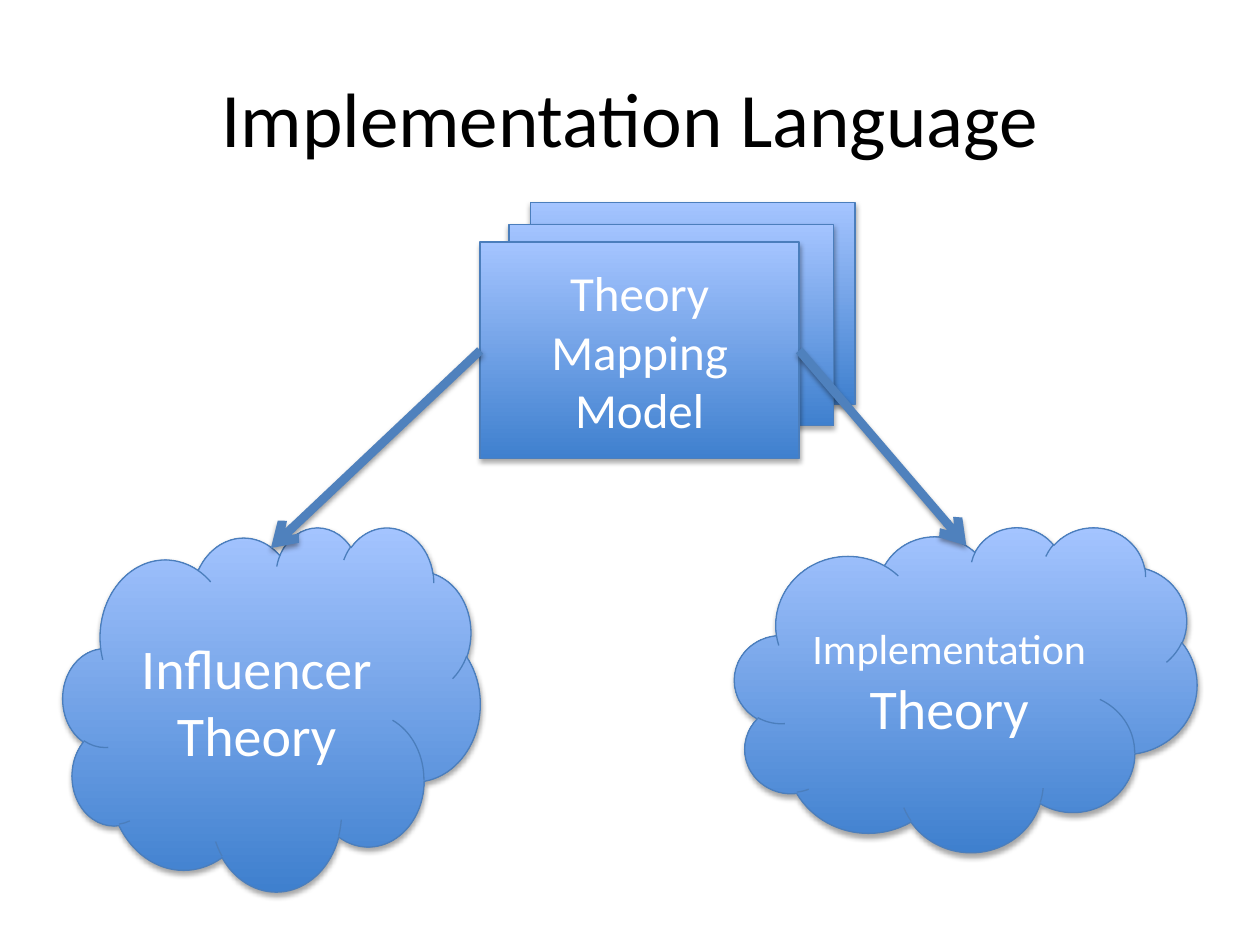
import pptx
import pptx.util
import pptx.dml.color
import pptx.enum.shapes
import pptx.enum.text
import pptx.oxml
import pptx.oxml.ns

Cm, Pt = pptx.util.Cm, pptx.util.Pt
RGBColor = pptx.dml.color.RGBColor
MSO_SHAPE = pptx.enum.shapes.MSO_SHAPE

FONT = "Calibri"
BLACK = RGBColor(0x00, 0x00, 0x00)
WHITE = RGBColor(0xFF, 0xFF, 0xFF)
DARK_BLUE = RGBColor(0x3F, 0x80, 0xCE)
LIGHT_BLUE = RGBColor(0xA4, 0xC4, 0xFF)
OUTLINE = RGBColor(0x4B, 0x7E, 0xBC)
ARROW = RGBColor(0x4F, 0x81, 0xBD)


def add_shadow(spPr, dist, opacity):
    """Append a soft shadow that falls straight down."""
    spPr.append(pptx.oxml.parse_xml(
        f'<a:effectLst {pptx.oxml.ns.nsdecls("a")}>'
        f'<a:outerShdw blurRad="{Pt(3.1)}" dist="{Pt(dist)}" dir="5400000" rotWithShape="0">'
        f'<a:srgbClr val="000000"><a:alpha val="{opacity * 1000}"/></a:srgbClr>'
        '</a:outerShdw></a:effectLst>'))


def write_lines(tf, lines, color):
    """Fill a text frame with centred (text, size) paragraphs."""
    tf.word_wrap = True
    tf.vertical_anchor = pptx.enum.text.MSO_ANCHOR.MIDDLE
    for i, (text, size) in enumerate(lines):
        p = tf.paragraphs[0] if i == 0 else tf.add_paragraph()
        p.text = text
        p.alignment = pptx.enum.text.PP_ALIGN.CENTER
        p.font.name = FONT
        p.font.size = Pt(size)
        p.font.color.rgb = color


prs = pptx.Presentation()
prs.slide_width, prs.slide_height = Cm(25.4), Cm(19.05)
s = prs.slides.add_slide(prs.slide_layouts[6])

# Title
tb = s.shapes.add_textbox(Cm(1.27), Cm(0.76), Cm(22.86), Cm(3.18))
write_lines(tb.text_frame, [("Implementation Language", 44)], BLACK)

# Theory clouds and the stack of model cards, back to front
shapes = [
    (MSO_SHAPE.RECTANGLE, 10.69, 4.09, 6.55, 4.06, []),
    (MSO_SHAPE.RECTANGLE, 10.26, 4.52, 6.55, 4.06, []),
    (MSO_SHAPE.CLOUD, 1.27, 10.62, 8.41, 7.34, [("Influencer", 32), ("Theory", 32)]),
    (MSO_SHAPE.CLOUD, 14.81, 10.62, 9.32, 6.55, [("Implementation", 24), ("Theory", 32)]),
    (MSO_SHAPE.RECTANGLE, 9.68, 4.88, 6.43, 4.37,
     [("Theory", 28), ("Mapping", 28), ("Model", 28)]),
]
for kind, x, y, w, h, lines in shapes:
    sp = s.shapes.add_shape(kind, Cm(x), Cm(y), Cm(w), Cm(h))
    sp.fill.gradient()
    sp.fill.gradient_angle = 90
    for stop, color in zip(sp.fill.gradient_stops, (DARK_BLUE, LIGHT_BLUE)):
        stop.color.rgb = color
    sp.line.color.rgb = OUTLINE
    sp.line.width = Pt(0.75)
    add_shadow(sp._element.spPr, 1.8, 35)
    write_lines(sp.text_frame, lines, WHITE)
front_card = sp

# Arrows from the sides of the front card to the clouds
for side, x, y in [(1, 5.46, 11.05), (3, 19.48, 11)]:
    cxn = s.shapes.add_connector(
        pptx.enum.shapes.MSO_CONNECTOR.STRAIGHT, Cm(12.9), Cm(7.06), Cm(x), Cm(y))
    cxn.begin_connect(front_card, side)
    cxn.line.color.rgb = ARROW
    cxn.line.width = Pt(5)
    cxn.line._get_or_add_ln().append(pptx.oxml.parse_xml(
        f'<a:tailEnd {pptx.oxml.ns.nsdecls("a")} type="arrow"/>'))
    add_shadow(cxn._element.spPr, 1.6, 38)

prs.save("out.pptx")
